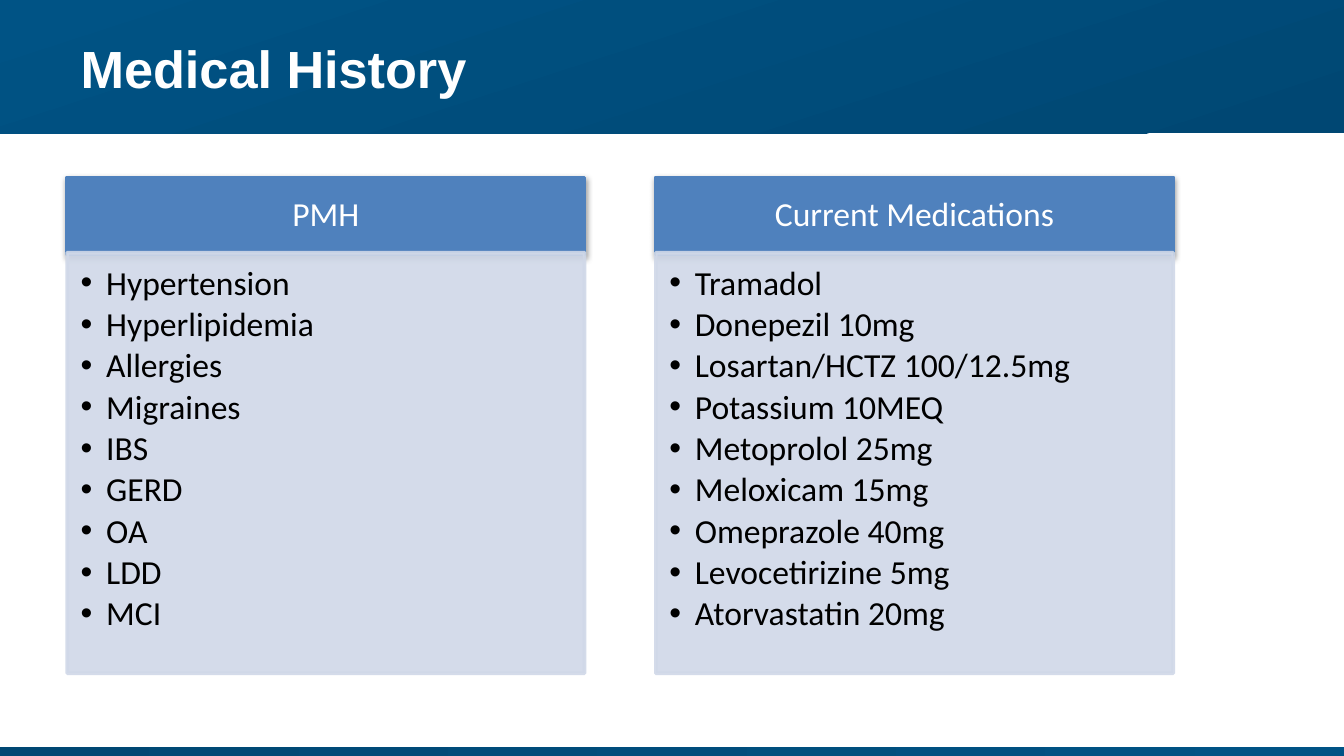
from dataclasses import dataclass

from lxml.etree import SubElement
from pptx import Presentation
from pptx.dml.color import RGBColor
from pptx.enum.shapes import MSO_SHAPE
from pptx.enum.text import MSO_ANCHOR, MSO_AUTO_SIZE, PP_ALIGN
from pptx.oxml.ns import qn
from pptx.util import Inches, Pt


@dataclass(frozen=True)
class Theme:
    band_dark: str = "004773"
    band_light: str = "005385"
    heading: str = "4F81BD"
    panel: str = "D0D8E8"
    white: str = "FFFFFF"
    black: str = "000000"
    title_font: str = "Arial"
    body_font: str = "Calibri"
    title_size: int = 28
    body_size: int = 18


THEME = Theme()
COLUMNS = [
    ("PMH", ["Hypertension", "Hyperlipidemia", "Allergies", "Migraines", "IBS",
             "GERD", "OA", "LDD", "MCI"]),
    ("Current Medications", [
        "Tramadol", "Donepezil 10mg", "Losartan/HCTZ 100/12.5mg",
        "Potassium 10MEQ", "Metoprolol 25mg", "Meloxicam 15mg",
        "Omeprazole 40mg", "Levocetirizine 5mg", "Atorvastatin 20mg"]),
]
SLIDE_WIDTH = 10
SLIDE_HEIGHT = SLIDE_WIDTH * 9 / 16
LEFT, STEP, WIDTH = 0.5, 4.38, 3.85
HEADING_TOP, HEADING_HEIGHT = 1.32, 0.57
PANEL_TOP, PANEL_HEIGHT = 1.88, 3.13


def rgb(color):
    return RGBColor.from_string(color)


def place(box, left, top, width, height):
    box.left, box.top = Inches(left), Inches(top)
    box.width, box.height = Inches(width), Inches(height)


def add_band(page, top, height, angle):
    """Full-width gradient band, kept behind the title."""
    band = page.shapes.add_shape(MSO_SHAPE.RECTANGLE, 0, Inches(top),
                                 Inches(SLIDE_WIDTH), Inches(height))
    band.shadow.inherit = False
    band.line.fill.background()
    band.fill.gradient()
    band.fill.gradient_angle = angle
    for stop, color in zip(band.fill.gradient_stops,
                           (THEME.band_dark, THEME.band_light)):
        stop.color.rgb = rgb(color)
    page.shapes.title._element.addprevious(band._element)


def paint(box, color):
    box.fill.solid()
    box.fill.fore_color.rgb = rgb(color)
    box.line.color.rgb = rgb(color)
    box.line.width = Pt(2)


def set_alpha(color_element, percent):
    SubElement(color_element, qn("a:alpha"), val=str(percent * 1000))


def add_shadow(box):
    effects = SubElement(box._element.spPr, qn("a:effectLst"))
    shadow = SubElement(effects, qn("a:outerShdw"), blurRad=str(Pt(3.1)),
                        dist=str(Pt(1.6)), dir="5400000", rotWithShape="0")
    set_alpha(SubElement(shadow, qn("a:srgbClr"), val=THEME.black), 38)


def set_frame(box, anchor, insets):
    frame = box.text_frame
    frame.word_wrap = True
    frame.auto_size = MSO_AUTO_SIZE.NONE
    frame.vertical_anchor = anchor
    (frame.margin_left, frame.margin_top,
     frame.margin_right, frame.margin_bottom) = map(Inches, insets)
    return frame


def style(para, font, size, color, bold=False):
    para.space_before = Pt(0)
    for span in para.runs:
        span.font.name = font
        span.font.size = Pt(size)
        span.font.bold = bold
        span.font.color.rgb = rgb(color)


def fill_title(title, text):
    place(title, 0.5, 0.01, 9, 0.99)
    frame = set_frame(title, MSO_ANCHOR.MIDDLE, (0.1, 0.05, 0.1, 0.05))
    frame.text = text
    para = frame.paragraphs[0]
    para.alignment = PP_ALIGN.LEFT
    style(para, THEME.title_font, THEME.title_size, THEME.white, bold=True)


def fill_heading(box, left, text):
    place(box, left, HEADING_TOP, WIDTH, HEADING_HEIGHT)
    paint(box, THEME.heading)
    add_shadow(box)
    frame = set_frame(box, MSO_ANCHOR.MIDDLE, (0.14, 0.08, 0.14, 0.08))
    frame.text = text
    para = frame.paragraphs[0]
    para.alignment = PP_ALIGN.CENTER
    para.line_spacing = 0.9
    style(para, THEME.body_font, THEME.body_size, THEME.white)


def fill_list(box, left, items):
    place(box, left, PANEL_TOP, WIDTH, PANEL_HEIGHT)
    paint(box, THEME.panel)
    for color in box._element.spPr.iter(qn("a:srgbClr")):
        set_alpha(color, 90)
    frame = set_frame(box, MSO_ANCHOR.TOP, (0.1, 0.1, 0.14, 0.16))
    frame.text = "\n".join(items)
    for para in frame.paragraphs:
        properties = para._p.get_or_add_pPr()
        properties.set("marL", str(Inches(0.19)))
        properties.set("indent", str(Inches(-0.19)))
        para.line_spacing = 0.9
        para.space_after = Pt(0.15 * THEME.body_size)
        style(para, THEME.body_font, THEME.body_size, THEME.black)


def main():
    deck = Presentation()
    deck.slide_width = Inches(SLIDE_WIDTH)
    deck.slide_height = Inches(SLIDE_HEIGHT)
    page = deck.slides.add_slide(deck.slide_layouts.get_by_name("Comparison"))

    # Title and bands
    add_band(page, 0, 0.99, 108)
    add_band(page, 5.56, 0.08, 0)
    fill_title(page.shapes.title, "Medical History")

    # Each column pairs a heading placeholder with a list placeholder
    for index, (heading, items) in enumerate(COLUMNS):
        left = LEFT + index * STEP
        fill_heading(page.placeholders[2 * index + 1], left, heading)
        fill_list(page.placeholders[2 * index + 2], left, items)

    deck.save("out.pptx")


if __name__ == "__main__":
    main()
